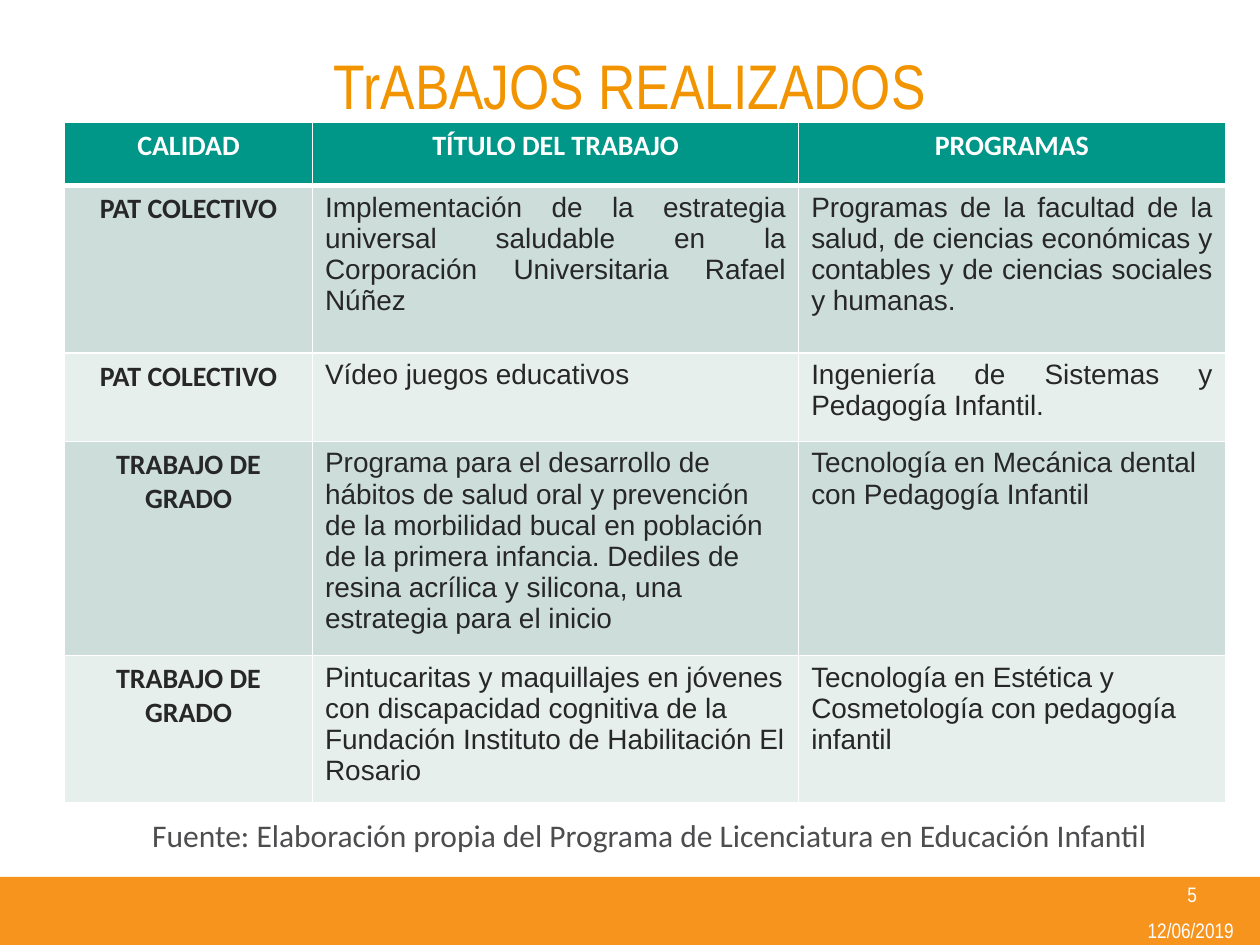
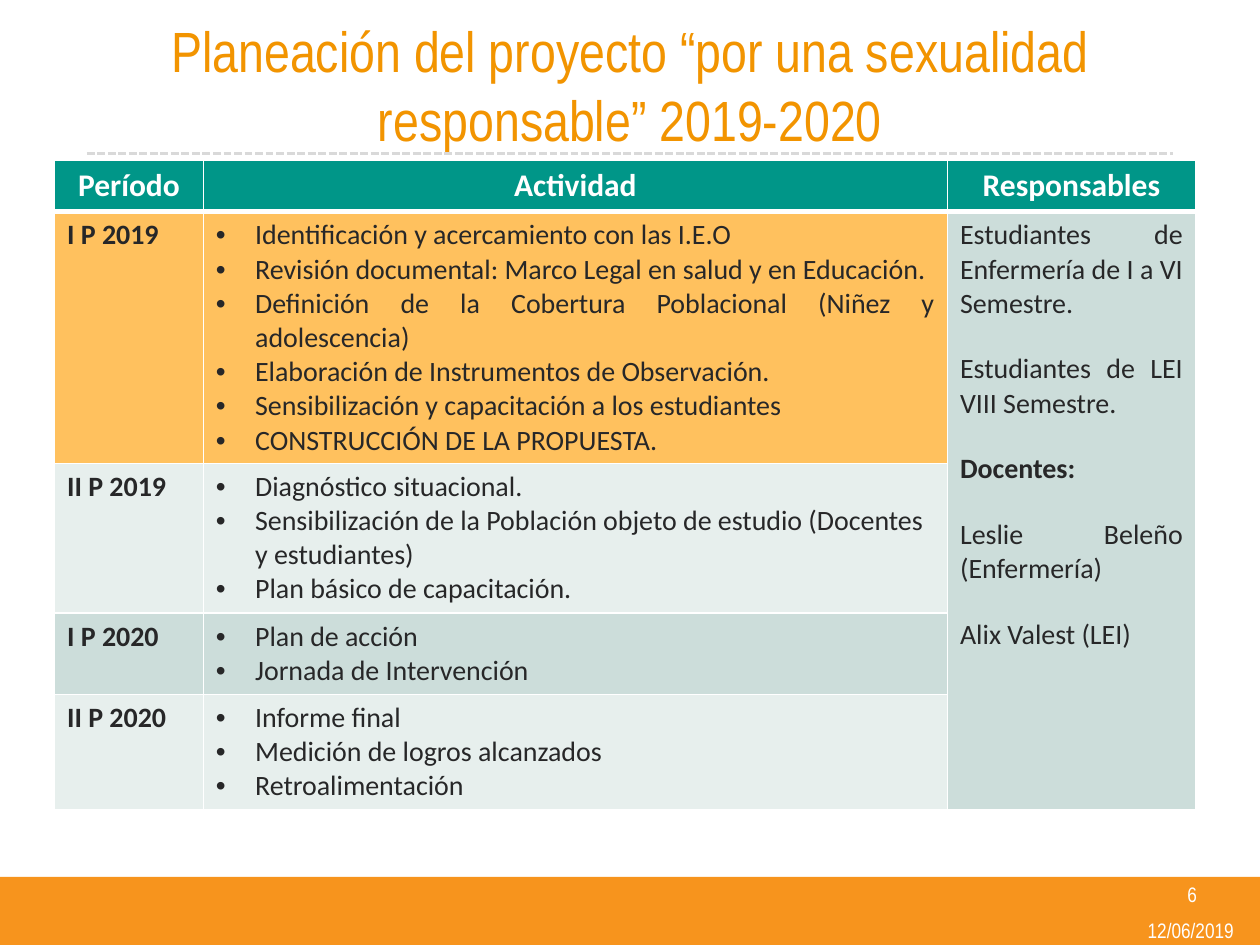
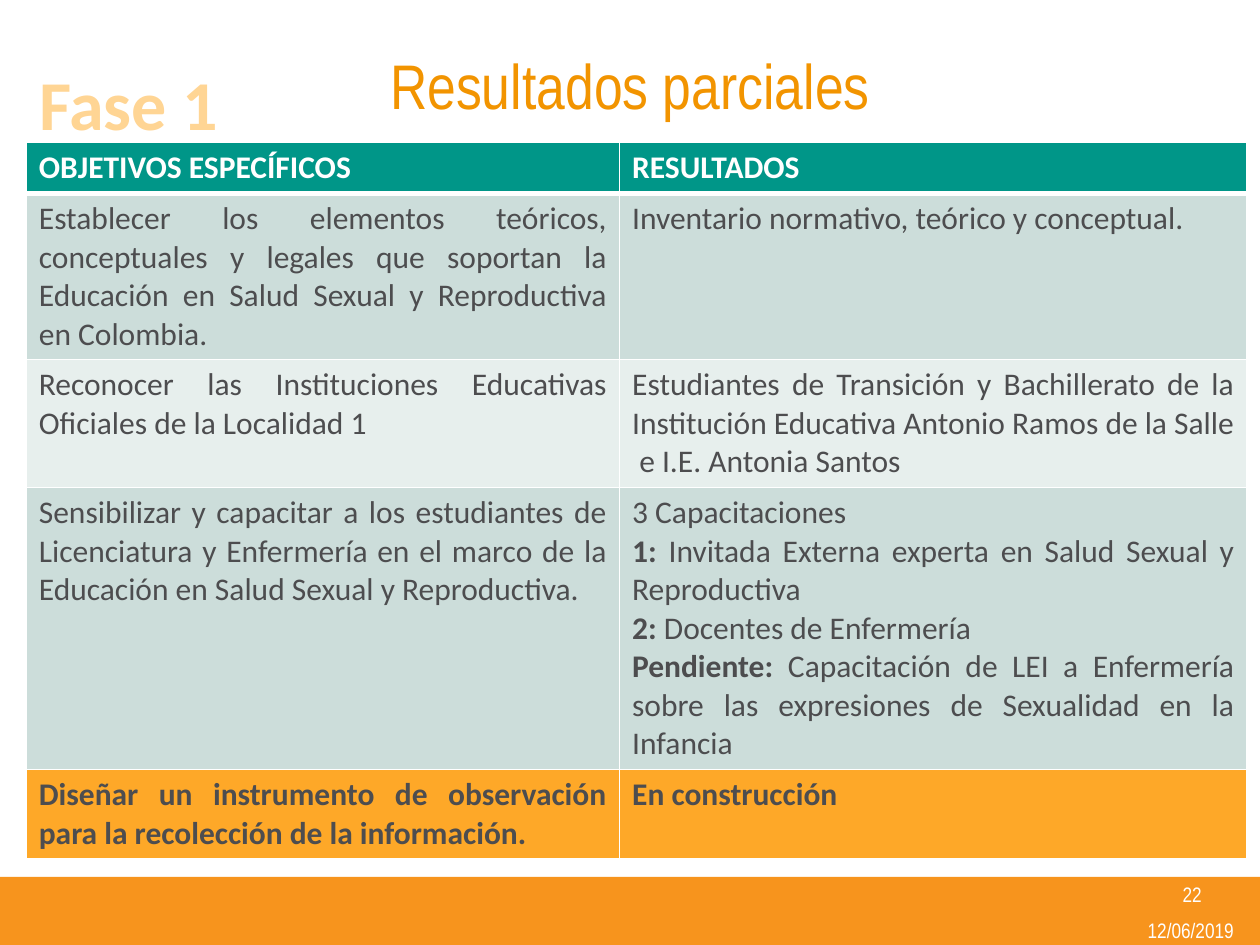
from lxml.etree import SubElement
from pptx import Presentation
from pptx.dml.color import RGBColor
from pptx.enum.dml import MSO_LINE
from pptx.enum.shapes import MSO_CONNECTOR, MSO_SHAPE
from pptx.enum.text import MSO_ANCHOR, PP_ALIGN
from pptx.oxml import parse_xml
from pptx.oxml.ns import nsdecls, qn
from pptx.util import Cm, Pt

ORANGE = RGBColor(0xF2, 0x94, 0x00)
BAND = RGBColor(0xF7, 0x94, 0x1D)
AMBER = RGBColor(0xFE, 0xA8, 0x28)
LIGHT_AMBER = RGBColor(0xFF, 0xC1, 0x5E)
PEACH = RGBColor(0xFF, 0xD5, 0x94)
TEAL = RGBColor(0x00, 0x96, 0x88)
MINT = RGBColor(0xCC, 0xDD, 0xDA)
PALE = RGBColor(0xE7, 0xEF, 0xED)
DARK = RGBColor(0x27, 0x27, 0x28)
GRAY = RGBColor(0x4D, 0x4D, 0x4F)
RULE = RGBColor(0xD9, 0xD9, 0xD9)
WHITE = RGBColor(0xFF, 0xFF, 0xFF)
LEFT, CENTER, JUSTIFY = PP_ALIGN.LEFT, PP_ALIGN.CENTER, PP_ALIGN.JUSTIFY
NARROW = "Arial Narrow"

DATE = "12/06/2019"
LABEL = dict(align=CENTER, bold=True)
ARIAL = dict(font="Arial")

WORKS = dict(
    left=1.3, top=2.47, size=16, head_size=16, head_align=CENTER, color=DARK,
    cols=[(5.0, LABEL), (9.8, ARIAL), (8.6, ARIAL)],
    head=(1.27, ["CALIDAD", "TÍTULO DEL TRABAJO", "PROGRAMAS"]),
    rows=[
        (3.38, MINT, JUSTIFY, [
            "PAT COLECTIVO",
            "Implementación de la estrategia universal saludable en la Corporación Universitaria Rafael Núñez",
            "Programas de la facultad de la salud, de ciencias económicas y contables y de ciencias sociales y humanas."]),
        (1.78, PALE, JUSTIFY, [
            "PAT COLECTIVO", "Vídeo juegos educativos",
            "Ingeniería de Sistemas y Pedagogía Infantil."]),
        (4.01, MINT, LEFT, [
            "TRABAJO DE GRADO",
            "Programa para el desarrollo de hábitos de salud oral y prevención de la morbilidad bucal en población "
            "de la primera infancia. Dediles de resina acrílica y silicona, una estrategia para el inicio",
            "Tecnología en Mecánica dental con Pedagogía Infantil"]),
        (2.74, PALE, LEFT, [
            "TRABAJO DE GRADO",
            "Pintucaritas y maquillajes en jóvenes con discapacidad cognitiva de la Fundación Instituto de "
            "Habilitación El Rosario",
            "Tecnología en Estética y Cosmetología con pedagogía infantil"]),
    ])

PLAN = dict(
    left=1.1, top=3.23, size=16, head_size=18, head_align=CENTER, color=DARK, merged_col=2,
    cols=[(3.0, dict(bold=True)), (15.0, dict(bullet=True)), (5.0, dict(gap=18, fill=MINT))],
    head=(1.04, ["Período", "Actividad", "Responsables"]),
    rows=[
        (5.07, LIGHT_AMBER, JUSTIFY, [
            "I P 2019",
            ["Identificación y acercamiento con las I.E.O",
             "Revisión documental: Marco Legal en salud y en Educación.",
             "Definición de la Cobertura Poblacional (Niñez y adolescencia)",
             "Elaboración de Instrumentos de Observación.",
             "Sensibilización y capacitación a los estudiantes",
             "CONSTRUCCIÓN DE LA PROPUESTA."],
            ["Estudiantes de Enfermería de I a VI Semestre.",
             "Estudiantes de LEI VIII Semestre.",
             "**Docentes:**",
             "Leslie Beleño (Enfermería)",
             "Alix Valest (LEI)"]]),
        (3.02, PALE, LEFT, [
            "II P 2019",
            ["Diagnóstico situacional.",
             "Sensibilización de la Población objeto de estudio (Docentes y estudiantes)",
             "Plan básico de capacitación."]]),
        (1.64, MINT, LEFT, ["I P 2020", ["Plan de acción", "Jornada de Intervención"]]),
        (2.32, PALE, LEFT, [
            "II P 2020",
            ["Informe final", "Medición de logros alcanzados", "Retroalimentación"]]),
    ])

RESULTS = dict(
    left=0.53, top=2.87, size=18, head_size=18, head_align=LEFT, color=GRAY,
    cols=[(11.96, {}), (12.65, {})],
    head=(1.03, ["OBJETIVOS ESPECÍFICOS", "RESULTADOS"]),
    rows=[
        (3.35, MINT, JUSTIFY, [
            "Establecer los elementos teóricos, conceptuales y legales que soportan la Educación en Salud Sexual y "
            "Reproductiva en Colombia.",
            "Inventario normativo, teórico y conceptual."]),
        (2.58, PALE, JUSTIFY, [
            "Reconocer las Instituciones Educativas Oficiales de la Localidad 1",
            "Estudiantes de Transición y Bachillerato de la Institución Educativa Antonio Ramos de la Salle  e I.E. "
            "Antonia Santos"]),
        (5.68, MINT, JUSTIFY, [
            "Sensibilizar y capacitar a los estudiantes de Licenciatura y Enfermería en el marco de la Educación en "
            "Salud Sexual y Reproductiva.",
            ["3 Capacitaciones",
             "**1: **Invitada Externa experta en Salud Sexual y Reproductiva",
             "**2: **Docentes de Enfermería",
             "**Pendiente: **Capacitación de LEI a Enfermería sobre las expresiones de Sexualidad en la Infancia"]]),
        (1.8, AMBER, JUSTIFY, [
            "**Diseñar un instrumento de observación para la recolección de la información.**",
            "**En construcción**"]),
    ])

SLIDES = [
    dict(title="TrABAJOS REALIZADOS", title_size=36, number="5", table=WORKS),
    dict(title="Planeación del proyecto “por una sexualidad responsable” 2019-2020",
         title_size=32.4, number="6", table=PLAN),
    dict(title="Resultados parciales", title_size=36, number="22", table=RESULTS),
]


def write(tf, text, font="Calibri", size=18, color=GRAY, bold=False, align=LEFT,
          bullet=False, gap=0, outline=None):
    paras = [text] if isinstance(text, str) else text
    for i, para in enumerate(paras):
        p = tf.add_paragraph() if i else tf.paragraphs[0]
        p.alignment = align
        if bullet:
            pPr = p._p.get_or_add_pPr()
            pPr.set("marL", str(Cm(0.79)))
            pPr.set("indent", str(-Cm(0.79)))
            SubElement(pPr, qn("a:buFont")).set("typeface", "Arial")
            SubElement(pPr, qn("a:buChar")).set("char", "•")
        if i and gap:
            p.space_before = Pt(gap)
        for j, part in enumerate(para.split("**")):
            if not part:
                continue
            r = p.add_run()
            r.text = part
            r.font.name, r.font.size = font, Pt(size)
            r.font.bold = bold or j % 2 == 1
            r.font.color.rgb = color
            if outline:
                r._r.get_or_add_rPr().insert(0, line_xml("ln", outline, 1.75))


def line_xml(tag, color, width):
    return parse_xml(f'<a:{tag} {nsdecls("a")} w="{Pt(width)}"><a:solidFill>'
                     f'<a:srgbClr val="{color}"/></a:solidFill></a:{tag}>')


def add_text(s, text, left, top, width, height, wrap=True, anchor=MSO_ANCHOR.TOP, **fmt):
    tf = s.shapes.add_textbox(Cm(left), Cm(top), Cm(width), Cm(height)).text_frame
    tf.word_wrap = wrap
    tf.vertical_anchor = anchor
    write(tf, text, **fmt)


def add_frame(s, title, title_size, number):
    band = s.shapes.add_shape(MSO_SHAPE.RECTANGLE, 0, Cm(17.68), Cm(25.4), Cm(1.42))
    band.shadow.inherit = False
    band.fill.solid()
    band.fill.fore_color.rgb = BAND
    band.line.fill.background()
    rule = s.shapes.add_connector(MSO_CONNECTOR.STRAIGHT, Cm(1.75), Cm(3.1), Cm(23.65), Cm(3.1))
    rule.line.color.rgb = RULE
    rule.line.width = Pt(1.5)
    rule.line.dash_style = MSO_LINE.SQUARE_DOT
    SubElement(rule._element.spPr, qn("a:effectLst"))
    small = dict(font=NARROW, size=12, color=WHITE, align=CENTER, anchor=MSO_ANCHOR.MIDDLE)
    add_text(s, DATE, 22.66, 18.49, 2.69, 0.53, wrap=False, **small)
    add_text(s, number, 22.7, 17.65, 2.67, 0.76, **small)
    sp = s.shapes.title
    sp.left, sp.top, sp.width, sp.height = Cm(1.75), Cm(0.33), Cm(21.9), Cm(2.74)
    sp.text_frame.vertical_anchor = MSO_ANCHOR.MIDDLE
    write(sp.text_frame, title, font=NARROW, size=title_size, color=ORANGE, align=CENTER)


def style_cell(cell, fill, bottom=1):
    cell.fill.solid()
    cell.fill.fore_color.rgb = fill
    tcPr = cell._tc.get_or_add_tcPr()
    for i, (tag, width) in enumerate([("lnL", 1), ("lnR", 1), ("lnT", 1), ("lnB", bottom)]):
        tcPr.insert(i, line_xml(tag, WHITE, width))


def add_grid(s, left, top, size, head_size, head_align, color, cols, head, rows, merged_col=None):
    head_height, names = head
    heights = [head_height] + [row[0] for row in rows]
    widths = [width for width, _ in cols]
    table = s.shapes.add_table(len(heights), len(cols), Cm(left), Cm(top),
                               Cm(sum(widths)), Cm(sum(heights))).table
    table.horz_banding = False
    for col, width in zip(table.columns, widths):
        col.width = Cm(width)
    for row, height in zip(table.rows, heights):
        row.height = Cm(height)
    for c, name in enumerate(names):
        style_cell(table.cell(0, c), TEAL, bottom=3)
        write(table.cell(0, c).text_frame, name, size=head_size, color=WHITE,
              bold=True, align=head_align)
    for i, (_, row_fill, align, texts) in enumerate(rows, 1):
        for c, (_, col_fmt) in enumerate(cols):
            fmt = dict(size=size, color=color, align=align, fill=row_fill) | col_fmt
            style_cell(table.cell(i, c), fmt.pop("fill"))
            if c < len(texts):
                write(table.cell(i, c).text_frame, texts[c], **fmt)
    if merged_col is not None:
        table.cell(1, merged_col).merge(table.cell(len(rows), merged_col))


def main():
    prs = Presentation()
    prs.slide_width, prs.slide_height = Cm(25.4), Cm(19.05)
    slides = []
    for data in SLIDES:
        s = prs.slides.add_slide(prs.slide_layouts[5])
        add_frame(s, data["title"], data["title_size"], data["number"])
        add_grid(s, **data["table"])
        slides.append(s)
    add_text(slides[0], "Fuente: Elaboración propia del Programa de Licenciatura en Educación Infantil",
             2.82, 16.33, 20.8, 1.02, wrap=False)
    add_text(slides[2], "Fase 1", 0.51, 1.09, 4.17, 1.96, wrap=False, size=40, color=PEACH,
             bold=True, align=CENTER, outline=ORANGE)
    prs.save("out.pptx")


if __name__ == "__main__":
    main()
